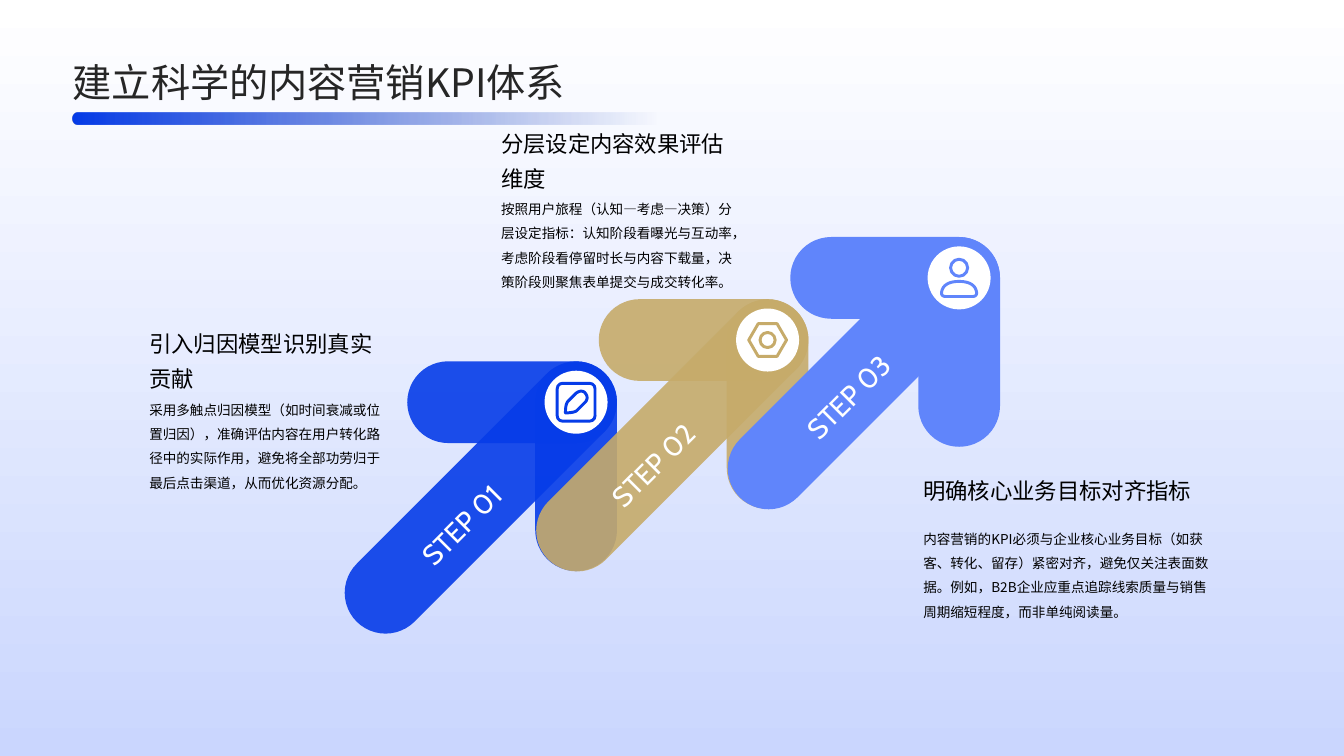
from lxml.etree import SubElement
from pptx import Presentation
from pptx.dml.color import RGBColor
from pptx.enum.shapes import MSO_SHAPE as Preset
from pptx.enum.text import MSO_ANCHOR as Anchor, MSO_AUTO_SIZE as AutoSize, PP_ALIGN as Align
from pptx.oxml.ns import qn
from pptx.util import Pt

TITLE = "建立科学的内容营销KPI体系"
STEPS = [
    {"label": "STEP 01", "color": "blue", "opacity": 90, "icon": "pen",
     "label_offset": (-82.8, 86.8), "note_at": (106.6, 229), "note_width": 170,
     "heading": "引入归因模型识别真实贡献",
     "body": "采用多触点归因模型（如时间衰减或位置归因），准确评估内容在用户转化路径中的"
             "实际作用，避免将全部功劳归于最后点击渠道，从而优化资源分配。"},
    {"label": "STEP 02", "color": "gold", "opacity": 90, "icon": "nut",
     "label_offset": (-82.8, 88.2), "note_at": (357.9, 85.7), "note_width": 170,
     "heading": "分层设定内容效果评估维度",
     "body": "按照用户旅程（认知—考虑—决策）分层设定指标：认知阶段看曝光与互动率，"
             "考虑阶段看停留时长与内容下载量，决策阶段则聚焦表单提交与成交转化率。"},
    {"label": "STEP 03", "color": "sky", "opacity": 100, "icon": "person",
     "label_offset": (-80, 83.9), "note_at": (659.5, 321.1), "note_width": 204.2,
     "heading": "明确核心业务目标对齐指标",
     "body": "内容营销的KPI必须与企业核心业务目标（如获客、转化、留存）紧密对齐，"
             "避免仅关注表面数据。例如，B2B企业应重点追踪线索质量与销售周期缩短程度，"
             "而非单纯阅读量。"},
]
# Back to front: (part, step index)
STACK = [("down", 1), ("down", 0), ("shaft", 2), ("across", 1), ("shaft", 1),
         ("badge", 1), ("shaft", 0), ("across", 0), ("badge", 0),
         ("across", 2), ("down", 2), ("badge", 2)]

COLORS = {"white": "FFFFFF", "mist": "CAD6FE", "blue": "063CE8", "navy": "052DAE",
          "gold": "C6AB6A", "sky": "6085FB", "black": "000000", "ink": "262626"}
CJK, LATIN = "Noto Sans CJK SC", "Cabin"
TITLE_FORMAT = {"size": Pt(28), "name": CJK}
HEADING_FORMAT = {"size": Pt(16), "name": CJK}
BODY_FORMAT = {"size": Pt(9.7), "name": CJK}
LABEL_FORMAT = {"size": Pt(20), "name": LATIN}

WIDTH, HEIGHT = 960, 540
TIP, PITCH = (411.5, 287.3), (136.8, -44.4)
BAR = 58.4
# Offset from the arrow tip, length, rotation
BARS = {"across": ((-45.7, 0), 149.8, 0),
        "down": ((0, 45.7), 149.8, 90),
        "shaft": ((-68.4, 68.4), 249.8, 315)}
BADGE, STROKE = 45, 2.1

# Each entry after the start is one point (line) or three (Bezier curve)
PEN = [(3.6, -7.9), [(2.2, -7.9), (1.1, -7.2), (0, -6.5)], [(-5.8, -0.7)],
       [(-7.2, 1.1), (-7.6, 3.6), (-7.6, 7.6)], [(-4.3, 7.6), (-0.7, 7.2), (0.7, 5.8)],
       [(6.5, 0)], [(8.3, -1.8), (8.3, -4.7), (6.5, -6.5)],
       [(5.8, -7.6), (4.7, -7.9), (3.6, -7.9)]]
BUST = [(0, 2.5), [(-8.1, 2.5), (-11.7, 5.8), (-12.4, 9.7)],
        [(-13, 11.9), (-11.9, 13.3), (-9.4, 13.3)], [(9.4, 13.3)],
        [(11.9, 13.3), (13, 11.9), (12.4, 9.7)], [(11.7, 5.8), (8.1, 2.5), (0, 2.5)]]
# (preset, width, height, vertical offset, corner adjustment)
ICONS = {"pen": ([(Preset.ROUNDED_RECTANGLE, 27, 27, 0, 0.14)], PEN),
         "nut": ([(Preset.HEXAGON, 27, 23.4, 0, 0.29), (Preset.OVAL, 10.8, 10.8, 0, None)], None),
         "person": ([(Preset.OVAL, 12.2, 12.2, -7.2, None)], BUST)}


def rgb(color):
    return RGBColor.from_string(COLORS[color])


def set_opacity(shape, percent):
    """Apply opacity to the last colour of the shape's fill."""
    SubElement(shape._element.spPr.xpath(".//a:srgbClr")[-1],
               qn("a:alpha")).set("val", str(percent * 1000))


def add_centred(shapes, preset, centre, width, height, adjustment=None):
    shape = shapes.add_shape(preset, Pt(centre[0] - width / 2), Pt(centre[1] - height / 2),
                             Pt(width), Pt(height))
    shape.shadow.inherit = False
    shape.line.fill.background()
    if adjustment is not None:
        shape.adjustments[0] = adjustment
    return shape


def paint(shape, color, opacity=100):
    shape.fill.solid()
    shape.fill.fore_color.rgb = rgb(color)
    if opacity < 100:
        set_opacity(shape, opacity)


def paint_gradient(shape, stops, angle):
    shape.fill.gradient()
    shape.fill.gradient_angle = angle
    for stop, (position, color) in zip(shape.fill.gradient_stops, stops):
        stop.position = position
        stop.color.rgb = rgb(color)


def outline(shape, color):
    shape.shadow.inherit = False
    shape.fill.background()
    shape.line.color.rgb = rgb(color)
    shape.line.width = Pt(STROKE)


def flatten(outline_path, pieces=10):
    """Turn lines and Bezier curves into a list of points."""
    points = [outline_path[0]]
    for segment in outline_path[1:]:
        if len(segment) == 1:
            points += segment
            continue
        knots = [points[-1], *segment]
        for i in range(1, pieces + 1):
            t = i / pieces
            weights = ((1 - t) ** 3, 3 * t * (1 - t) ** 2, 3 * t * t * (1 - t), t ** 3)
            points.append(tuple(sum(w * k[axis] for w, k in zip(weights, knots))
                                for axis in (0, 1)))
    return points


def add_icon(shapes, kind, centre, color):
    x, y = centre
    presets, outline_path = ICONS[kind]
    for preset, width, height, drop, adjustment in presets:
        outline(add_centred(shapes, preset, (x, y + drop), width, height, adjustment), color)
    if outline_path:
        points = [(Pt(x + dx), Pt(y + dy)) for dx, dy in flatten(outline_path)]
        builder = shapes.build_freeform(*points[0])
        builder.add_line_segments(points[1:], close=True)
        outline(builder.convert_to_shape(), color)


def write(box, text, style, color, spacing, anchor=Anchor.TOP, align=Align.LEFT, inset=0):
    frame = box.text_frame
    frame.word_wrap = True
    frame.auto_size = AutoSize.NONE
    frame.vertical_anchor = anchor
    if inset is not None:
        for side in ("left", "top", "right", "bottom"):
            setattr(frame, f"margin_{side}", Pt(inset))
    paragraph = frame.paragraphs[0]
    paragraph.alignment, paragraph.line_spacing = align, spacing
    run = paragraph.add_run()
    run.text = text
    for name, value in style.items():
        setattr(run.font, name, value)
    run.font.color.rgb = rgb(color)
    SubElement(run._r.get_or_add_rPr(), qn("a:ea")).set("typeface", style["name"])


def add_note(shapes, step):
    left, top = step["note_at"]
    width = Pt(step["note_width"])
    heading = shapes.add_textbox(Pt(left), Pt(top), width, Pt(52.4))
    write(heading, step["heading"], HEADING_FORMAT, "black", 1.3, Anchor.MIDDLE)
    body = shapes.add_textbox(Pt(left), Pt(top + 52), width, Pt(72))
    write(body, step["body"], BODY_FORMAT, "black", 1.5)


def add_label(shapes, step, tip):
    width, height = 126, 33.8
    x, y = (t + d for t, d in zip(tip, step["label_offset"]))
    label = shapes.add_textbox(Pt(x - width / 2), Pt(y - height / 2), Pt(width), Pt(height))
    label.rotation = 315
    write(label, step["label"], LABEL_FORMAT, "white", 1.1, align=Align.CENTER, inset=None)
    label.text_frame.auto_size = AutoSize.SHAPE_TO_FIT_TEXT


def main():
    deck = Presentation()
    deck.slide_width, deck.slide_height = Pt(WIDTH), Pt(HEIGHT)
    slide = deck.slides.add_slide(deck.slide_layouts[5])
    shapes = slide.shapes

    backdrop = add_centred(shapes, Preset.RECTANGLE, (WIDTH / 2, HEIGHT / 2), WIDTH, HEIGHT)
    paint_gradient(backdrop, [(0, "white"), (1, "mist")], 270)

    tips = [tuple(t + i * p for t, p in zip(TIP, PITCH)) for i in range(len(STEPS))]
    for part, i in STACK:
        step, tip = STEPS[i], tips[i]
        if part == "badge":
            paint(add_centred(shapes, Preset.OVAL, tip, BADGE, BADGE), "white")
            add_icon(shapes, step["icon"], tip, step["color"])
            continue
        offset, length, rotation = BARS[part]
        centre = tuple(t + d for t, d in zip(tip, offset))
        bar = add_centred(shapes, Preset.ROUNDED_RECTANGLE, centre, length, BAR, 0.5)
        bar.rotation = rotation
        paint(bar, step["color"], step["opacity"])

    for step, tip in zip(STEPS, tips):
        add_note(shapes, step)
        add_label(shapes, step, tip)

    title = shapes.title
    title.left, title.top, title.width, title.height = Pt(52), Pt(38.2), Pt(855.4), Pt(36.7)
    write(title, TITLE, TITLE_FORMAT, "ink", 1.1, Anchor.MIDDLE)
    shapes._spTree.append(title._element)  # bring in front of the backdrop

    underline = add_centred(shapes, Preset.ROUNDED_RECTANGLE, (313, 84.7), 522, 8, 0.5)
    paint_gradient(underline, [(0, "blue"), (0.8, "navy")], 0)
    set_opacity(underline, 0)

    deck.save("out.pptx")


if __name__ == "__main__":
    main()
